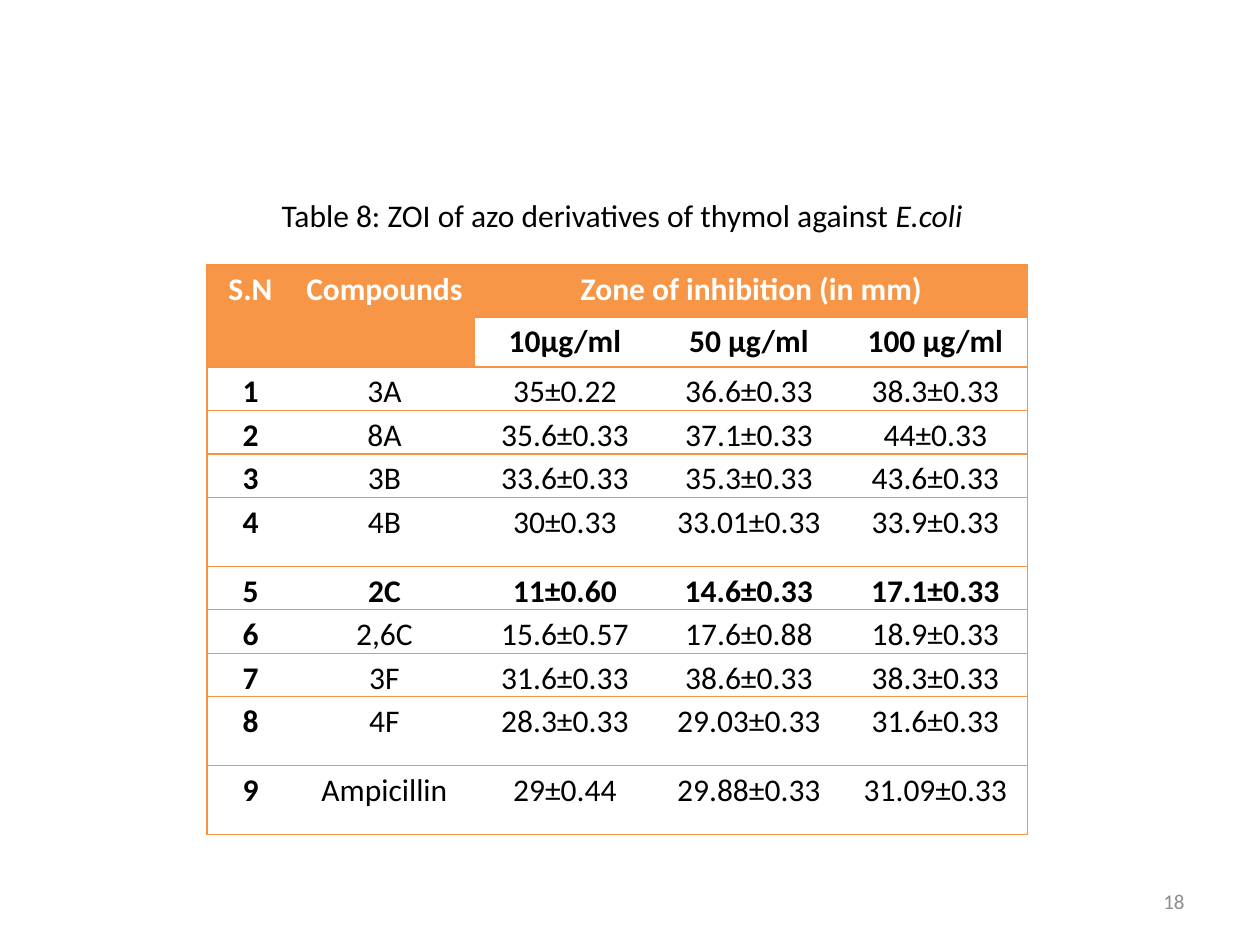
import pptx
import pptx.dml.color
import pptx.enum.text
import pptx.oxml.ns
import pptx.util
from lxml import etree

EMU_PER_PX = 914400 // 126
FONT = "Calibri"
COLORS = {
    "header": "F79646",
    "border": "F69240",
    "white": "FFFFFF",
    "black": "000000",
    "number": "8C8C8C",
}
ALIGN = pptx.enum.text.PP_ALIGN

COLUMN_WIDTHS = [87, 181, 180, 188, 185]
HEADER_HEIGHTS = [52, 50]
ROW_HEIGHT, TALL_ROW_HEIGHT = 40, 69
TALL_ROWS = {"4", "8", "9"}
BOLD_ROW = "5"
HEADERS = [
    ["S.N", "Compounds", "Zone of inhibition (in mm)", "", ""],
    ["", "", "10µg/ml", "50 µg/ml", "100 µg/ml"],
]
RESULTS = [
    ["1", "3A", "35±0.22", "36.6±0.33", "38.3±0.33"],
    ["2", "8A", "35.6±0.33", "37.1±0.33", "44±0.33"],
    ["3", "3B", "33.6±0.33", "35.3±0.33", "43.6±0.33"],
    ["4", "4B", "30±0.33", "33.01±0.33", "33.9±0.33"],
    ["5", "2C", "11±0.60", "14.6±0.33", "17.1±0.33"],
    ["6", "2,6C", "15.6±0.57", "17.6±0.88", "18.9±0.33"],
    ["7", "3F", "31.6±0.33", "38.6±0.33", "38.3±0.33"],
    ["8", "4F", "28.3±0.33", "29.03±0.33", "31.6±0.33"],
    ["9", "Ampicillin", "29±0.44", "29.88±0.33", "31.09±0.33"],
]


def px(length):
    return pptx.util.Emu(length * EMU_PER_PX)


def rgb(name):
    return pptx.dml.color.RGBColor.from_string(COLORS[name])


def add_run(paragraph, text, color="black", size=18, bold=False, italic=False):
    run = paragraph.add_run()
    run.text = text
    run.font.name = FONT
    run.font.size = pptx.util.Pt(size)
    run.font.bold = bold
    run.font.italic = italic
    run.font.color.rgb = rgb(color)


def add_text_box(slide, left, top, width, height, alignment):
    """Add an empty wrapping text box and return its text frame."""
    shape = slide.shapes.add_textbox(px(left), px(top), px(width), px(height))
    shape.text_frame.word_wrap = True
    shape.text_frame.paragraphs[0].alignment = alignment
    return shape.text_frame


def set_borders(cell, visible_sides):
    properties = cell._tc.get_or_add_tcPr()
    qn = pptx.oxml.ns.qn
    for side in "LRTB":
        line = etree.SubElement(properties, qn(f"a:ln{side}"))
        if side in visible_sides:
            line.set("w", str(pptx.util.Pt(0.75)))
            fill = etree.SubElement(line, qn("a:solidFill"))
            etree.SubElement(fill, qn("a:srgbClr"), val=COLORS["border"])
        else:
            etree.SubElement(line, qn("a:noFill"))


def fill_cell(cell, text, visible_sides, header=False, bold=False):
    cell.margin_left = cell.margin_right = px(9)
    cell.margin_top = cell.margin_bottom = 0
    set_borders(cell, visible_sides)
    if header:
        cell.fill.solid()
        cell.fill.fore_color.rgb = rgb("header")
    else:
        cell.fill.background()
    paragraph = cell.text_frame.paragraphs[0]
    paragraph.alignment = ALIGN.CENTER
    paragraph.line_spacing = 1.15
    if text:
        add_run(paragraph, text, "white" if header else "black", bold=bold)


def add_results_table(slide, left, top):
    rows = HEADERS + RESULTS
    heights = HEADER_HEIGHTS + [
        TALL_ROW_HEIGHT if row[0] in TALL_ROWS else ROW_HEIGHT for row in RESULTS
    ]
    table = slide.shapes.add_table(
        len(rows), len(COLUMN_WIDTHS), px(left), px(top),
        px(sum(COLUMN_WIDTHS)), px(sum(heights)),
    ).table
    table.first_row = table.horz_banding = False
    for column, width in zip(table.columns, COLUMN_WIDTHS):
        column.width = px(width)
    for table_row, height in zip(table.rows, heights):
        table_row.height = px(height)

    # Header spans
    table.cell(0, 0).merge(table.cell(1, 0))
    table.cell(0, 1).merge(table.cell(1, 1))
    table.cell(0, 2).merge(table.cell(0, 4))

    # Rules between rows, and an outer frame without inner verticals
    last_column = len(COLUMN_WIDTHS) - 1
    for r, row in enumerate(rows):
        for c, text in enumerate(row):
            sides = "TB" + ("L" if c == 0 else "") + ("R" if c == last_column else "")
            header = r == 0 or (r == 1 and c < 2)
            bold = r < len(HEADERS) or c == 0 or row[0] == BOLD_ROW
            fill_cell(table.cell(r, c), text, sides, header, bold)


def main():
    presentation = pptx.Presentation()
    presentation.slide_width, presentation.slide_height = px(1260), px(945)
    slide = presentation.slides.add_slide(presentation.slide_layouts[6])

    # Slide number
    number = add_text_box(slide, 903, 876, 294, 50, ALIGN.RIGHT)
    number.vertical_anchor = pptx.enum.text.MSO_ANCHOR.MIDDLE
    add_run(number.paragraphs[0], "18", "number", size=12)

    # Results
    add_results_table(slide, 207, 265)

    # Caption
    caption = add_text_box(slide, 215, 190, 814, 89, ALIGN.CENTER).paragraphs[0]
    add_run(caption, "Table 8: ZOI of azo derivatives of thymol against ")
    add_run(caption, "E.coli", italic=True)

    presentation.save("out.pptx")


if __name__ == "__main__":
    main()
